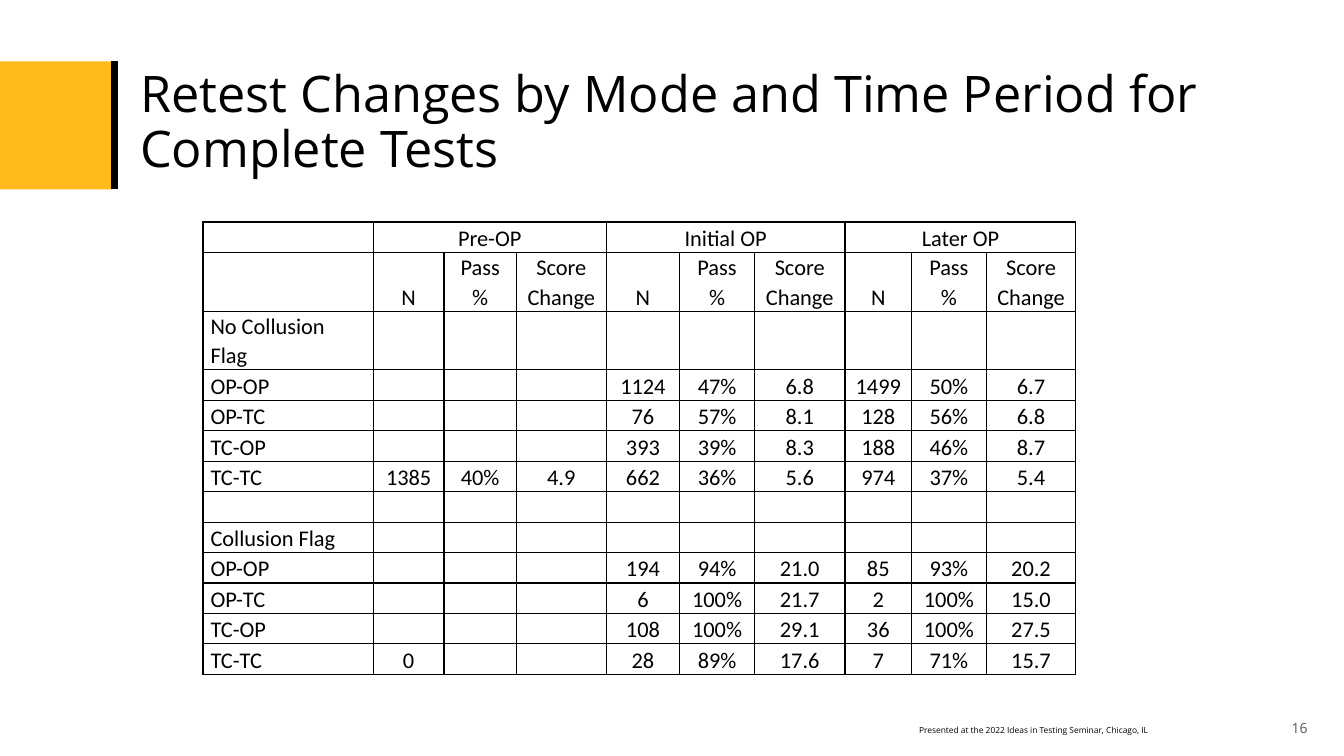
from lxml.etree import SubElement
from pptx import Presentation
from pptx.dml.color import RGBColor
from pptx.enum.shapes import MSO_CONNECTOR as LINE, MSO_SHAPE as SHAPE
from pptx.enum.text import MSO_ANCHOR as ANCHOR, PP_ALIGN as ALIGN
from pptx.oxml.ns import qn
from pptx.util import Pt

GOLD = RGBColor(0xFF, 0xBA, 0x1C)
BLACK = RGBColor(0, 0, 0)
GREY = RGBColor(0x59, 0x59, 0x59)

COLS = [121.7, 50.4, 51.8, 64.1, 52.6, 53.3, 64.8, 47.5, 53.3, 64.1]
LOW, HIGH = 21.75, 42
HEADS = ["N", "Pass %", "Score Change"]
GAP = [""] * 3
ROWS = [
    ["", "Pre-OP", "", "", "Initial OP", "", "", "Later OP", "", ""],
    [""] + HEADS * 3,
    ["No Collusion Flag"] + GAP * 3,
    ["OP-OP", *GAP, "1124", "47%", "6.8", "1499", "50%", "6.7"],
    ["OP-TC", *GAP, "76", "57%", "8.1", "128", "56%", "6.8"],
    ["TC-OP", *GAP, "393", "39%", "8.3", "188", "46%", "8.7"],
    ["TC-TC", "1385", "40%", "4.9", "662", "36%", "5.6", "974", "37%", "5.4"],
    [""] + GAP * 3,
    ["Collusion Flag"] + GAP * 3,
    ["OP-OP", *GAP, "194", "94%", "21.0", "85", "93%", "20.2"],
    ["OP-TC", *GAP, "6", "100%", "21.7", "2", "100%", "15.0"],
    ["TC-OP", *GAP, "108", "100%", "29.1", "36", "100%", "27.5"],
    ["TC-TC", "0", "", "", "28", "89%", "17.6", "7", "71%", "15.7"],
]


def style(para, size, color=BLACK, face="Open Sans", align=ALIGN.LEFT):
    """Set the font and alignment of a paragraph."""
    para.alignment = align
    font = para.font
    font.size, font.name, font.color.rgb = Pt(size), face, color


def add_mark(slide, x, y, w, h):
    """Draw the gold block and the black bar at its right."""
    block = slide.shapes.add_shape(SHAPE.RECTANGLE, Pt(x), Pt(y), Pt(w), Pt(h))
    block.shadow.inherit = False
    block.fill.solid()
    block.fill.fore_color.rgb = GOLD
    block.line.fill.background()
    edge = Pt(x + w + 1.5)
    bar = slide.shapes.add_connector(LINE.STRAIGHT, edge, Pt(y), edge, Pt(y + h - 0.5))
    bar.line.width = Pt(5)
    bar.line.color.rgb = BLACK
    SubElement(bar._element.spPr, qn("a:effectLst"))


def add_title(slide, x, y, w, h):
    """Place and format the title."""
    title = slide.shapes.title
    title.left, title.top, title.width, title.height = Pt(x), Pt(y), Pt(w), Pt(h)
    frame = title.text_frame
    frame.text = "Retest Changes by Mode and Time Period for Complete Tests"
    frame.vertical_anchor = ANCHOR.MIDDLE
    para = frame.paragraphs[0]
    para.line_spacing = 0.9
    style(para, 36)


def add_note(slide, text, size, color, align, x, y, w, h):
    """Add one line of small text."""
    frame = slide.shapes.add_textbox(Pt(x), Pt(y), Pt(w), Pt(h)).text_frame
    frame.word_wrap = True
    frame.vertical_anchor = ANCHOR.MIDDLE
    frame.text = text
    style(frame.paragraphs[0], size, color, align=align)


def rule_cell(cell):
    """Give a cell black borders and no fill."""
    props = cell._tc.get_or_add_tcPr()
    for side in ("lnL", "lnR", "lnT", "lnB"):
        line = SubElement(props, qn(f"a:{side}"), w=str(Pt(1)))
        fill = SubElement(line, qn("a:solidFill"))
        SubElement(fill, qn("a:srgbClr"), val=str(BLACK))
    cell.fill.background()


def add_scores(slide, x, y):
    """Build the table of retest changes."""
    tall = [HIGH if r in (1, 2) else LOW for r in range(len(ROWS))]
    frame = slide.shapes.add_table(
        len(ROWS), len(COLS), Pt(x), Pt(y), Pt(sum(COLS)), Pt(sum(tall)))
    table = frame.table
    table.first_row = table.horz_banding = False
    for col, width in zip(table.columns, COLS):
        col.width = Pt(width)
    for r, texts in enumerate(ROWS):
        table.rows[r].height = Pt(tall[r])
        for c, text in enumerate(texts):
            cell = table.cell(r, c)
            rule_cell(cell)
            cell.margin_left = cell.margin_right = Pt(5.4)
            cell.margin_top = cell.margin_bottom = 0
            cell.vertical_anchor = ANCHOR.BOTTOM
            cell.text = text
            para = cell.text_frame.paragraphs[0]
            para.line_spacing = 1.07
            style(para, 16, face="Calibri", align=ALIGN.CENTER if c else ALIGN.LEFT)
    for c in range(1, len(COLS), 3):
        table.cell(0, c).merge(table.cell(0, c + 2))


def main():
    """Build and save the slide."""
    deck = Presentation()
    deck.slide_width, deck.slide_height = Pt(960), Pt(540)
    slide = deck.slides.add_slide(deck.slide_layouts[5])
    add_mark(slide, 0, 43.9, 80, 91.4)
    add_title(slide, 92.9, 44.6, 784.8, 87.8)
    add_scores(slide, 145, 158.5)
    add_note(slide, "Presented at the 2022 Ideas in Testing Seminar, Chicago, IL",
             6, BLACK, ALIGN.LEFT, 649.4, 514, 268.6, 14.4)
    add_note(slide, "16", 10, GREY, ALIGN.RIGHT, 909.4, 505.4, 31.7, 28.8)
    deck.save("out.pptx")


if __name__ == "__main__":
    main()
